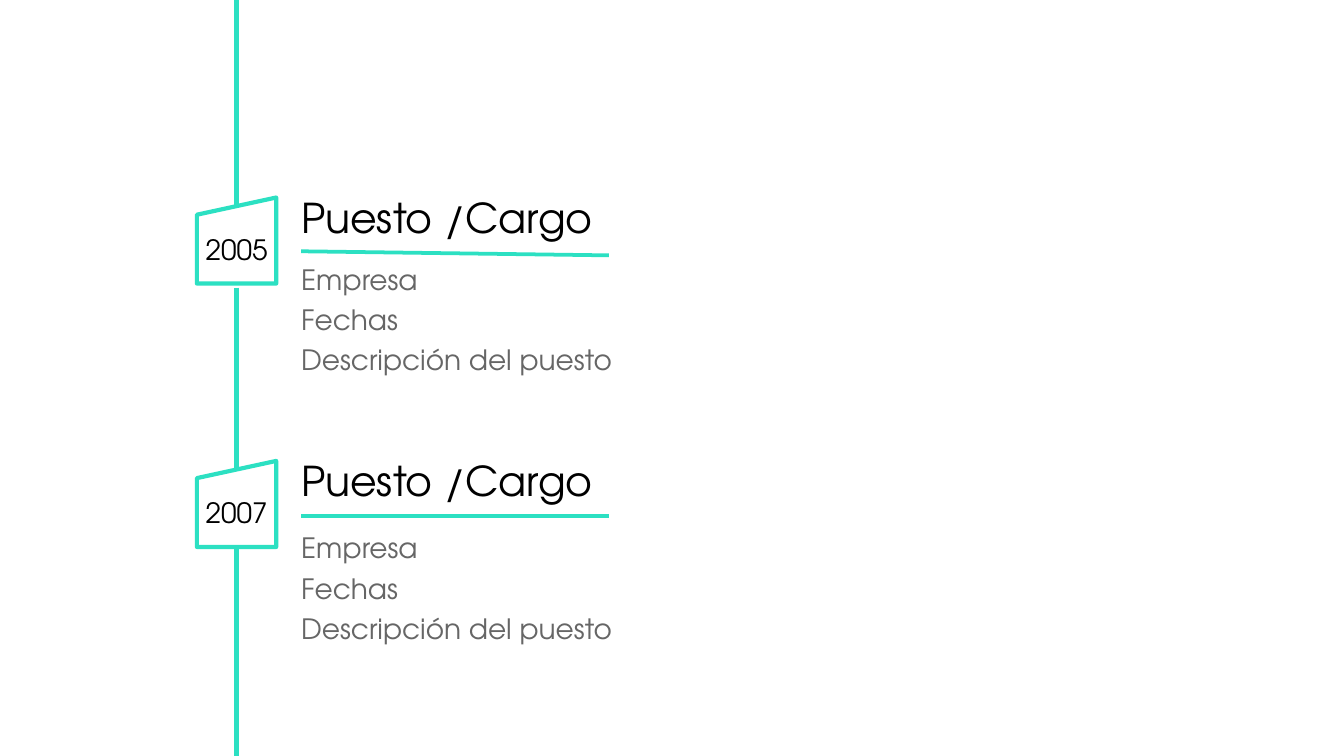
from pptx import Presentation
from pptx.dml.color import RGBColor
from pptx.enum.shapes import MSO_CONNECTOR, MSO_SHAPE
from pptx.enum.text import MSO_ANCHOR, MSO_AUTO_SIZE, PP_ALIGN
from pptx.oxml.ns import qn
from pptx.util import Inches, Pt
from lxml.etree import SubElement

TEAL = RGBColor(0x2C, 0xE0, 0xC2)
WHITE = RGBColor(0xFF, 0xFF, 0xFF)
BLACK = RGBColor(0, 0, 0)
GRAY = RGBColor(0x66, 0x66, 0x66)
FONT = "TeX Gyre Adventor"

WIDTH = 10
HEIGHT = WIDTH * 9 / 16
AXIS_X = 1.76
BADGE_W, BADGE_H = 0.59, 0.64
TEXT_X, TEXT_W, RULE_W = 2.24, 2.41, 2.29
DETAILS = ["Empresa", "Fechas", "Descripción del puesto"]

# year, badge top, list offset, rule start and end offsets from the badge top
JOBS = [
    ("2005", 1.47, 0.43, 0.40, 0.43),
    ("2007", 3.43, 0.47, 0.41, 0.41),
]
AXIS_PARTS = [(0, 1.55), (2.14, 3.52), (4.07, HEIGHT)]


def add_line(s, x1, y1, x2, y2, width):
    line = s.shapes.add_connector(
        MSO_CONNECTOR.STRAIGHT, Inches(x1), Inches(y1), Inches(x2), Inches(y2))
    line.line.color.rgb = TEAL
    line.line.width = Pt(width)
    SubElement(line._element.spPr, qn("a:effectLst"))


def style_frame(tf, anchor, right=0):
    tf.margin_left = tf.margin_top = tf.margin_bottom = 0
    tf.margin_right = Inches(right)
    tf.vertical_anchor = anchor


def style_paragraph(p, size, color):
    p.font.name = FONT
    p.font.size = Pt(size)
    p.font.bold = False
    p.font.color.rgb = color


def fill_placeholder(sp, box, lines, size, color, spacing, right=0):
    """Place a body placeholder and fill it with unbulleted lines."""
    sp.left, sp.top, sp.width, sp.height = map(Inches, box)
    tf = sp.text_frame
    tf.text = "\n".join(lines)
    tf.word_wrap = True
    tf.auto_size = MSO_AUTO_SIZE.NONE
    style_frame(tf, MSO_ANCHOR.TOP, right)
    for p in tf.paragraphs:
        style_paragraph(p, size, color)
        p.line_spacing = spacing
        p.space_before = p.space_after = Pt(0)
        pPr = p._p.get_or_add_pPr()
        pPr.set("marL", "0")
        pPr.set("indent", "0")
        pPr.insert_element_before(
            pPr.makeelement(qn("a:buNone"), {}), "a:tabLst", "a:defRPr", "a:extLst")


def add_badge(s, year, top):
    sp = s.shapes.add_shape(
        MSO_SHAPE.FLOWCHART_MANUAL_INPUT, Inches(AXIS_X - BADGE_W / 2),
        Inches(top), Inches(BADGE_W), Inches(BADGE_H))
    sp.shadow.inherit = False
    sp.fill.solid()
    sp.fill.fore_color.rgb = WHITE
    sp.line.color.rgb = TEAL
    sp.line.width = Pt(2.25)
    tf = sp.text_frame
    tf.text = year
    style_frame(tf, MSO_ANCHOR.MIDDLE)
    p = tf.paragraphs[0]
    p.alignment = PP_ALIGN.CENTER
    style_paragraph(p, 15, BLACK)


def add_job(s, heading, details, year, top, list_dy, rule_dy1, rule_dy2):
    add_badge(s, year, top)
    fill_placeholder(heading, (TEXT_X, top + 0.03, TEXT_W, 0.3),
                     ["Puesto /Cargo"], 22, BLACK, 0.8)
    fill_placeholder(details, (TEXT_X, top + list_dy, TEXT_W, 0.88),
                     DETAILS, 15, GRAY, 1.2, right=0.07)
    add_line(s, TEXT_X, top + rule_dy1, TEXT_X + RULE_W, top + rule_dy2, 2)


def main():
    prs = Presentation()
    prs.slide_width, prs.slide_height = Inches(WIDTH), Inches(HEIGHT)
    s = prs.slides.add_slide(prs.slide_layouts.get_by_name("Comparison"))
    title, *bodies = s.placeholders
    title._element.getparent().remove(title._element)

    for y1, y2 in AXIS_PARTS:
        add_line(s, AXIS_X, y1, AXIS_X, y2, 2.25)
    for heading, details, job in zip(bodies[::2], bodies[1::2], JOBS):
        add_job(s, heading, details, *job)

    prs.save("out.pptx")


if __name__ == "__main__":
    main()
